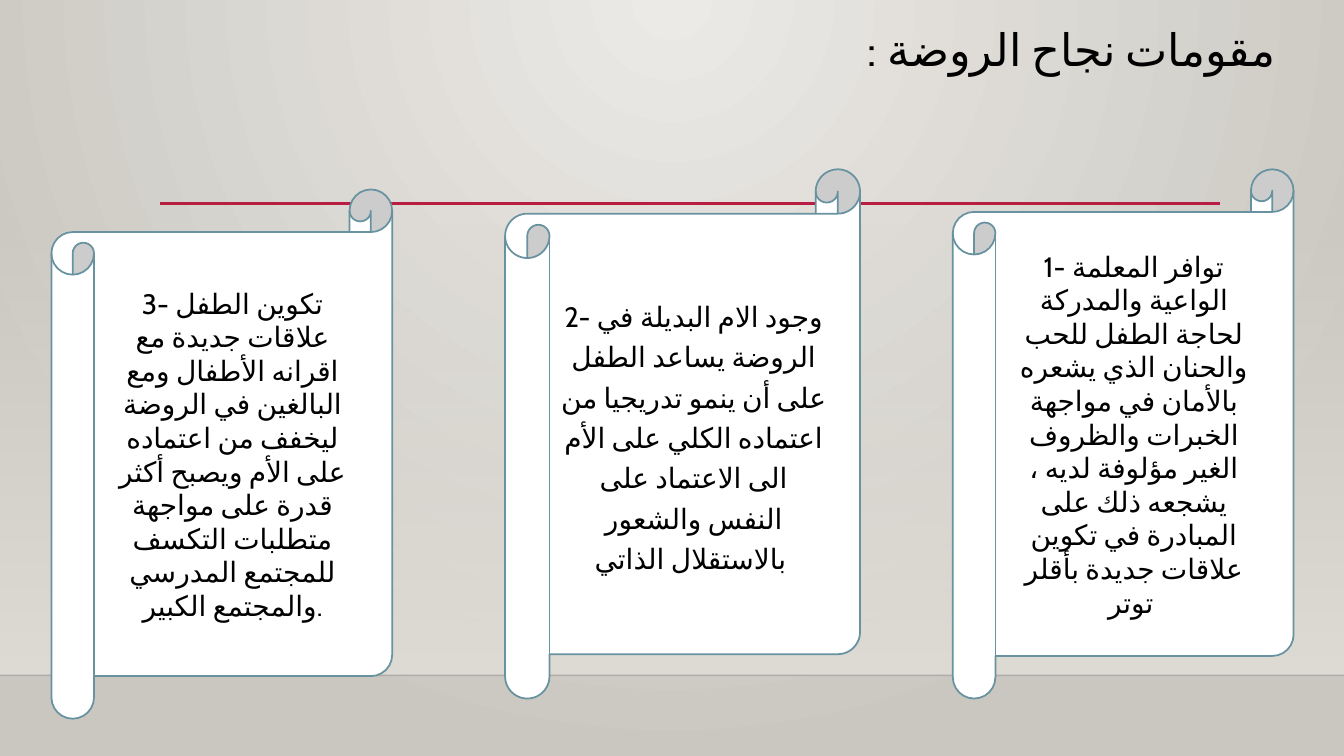
import pptx
import pptx.util
import pptx.dml.color
import pptx.enum.lang
import pptx.enum.shapes
import pptx.enum.text
import pptx.oxml.ns
from lxml import etree

Inches = pptx.util.Inches
Pt = pptx.util.Pt
RGBColor = pptx.dml.color.RGBColor
qn = pptx.oxml.ns.qn
ALIGN = pptx.enum.text.PP_ALIGN
ANCHOR = pptx.enum.text.MSO_ANCHOR
SHAPE = pptx.enum.shapes.MSO_SHAPE

FONT = "Cabin"
BLACK = RGBColor(0x00, 0x00, 0x00)
WHITE = RGBColor(0xFF, 0xFF, 0xFF)
GLOW = RGBColor(0xEC, 0xEA, 0xE7)
EDGE = RGBColor(0xCA, 0xC7, 0xC1)
WALL = RGBColor(0xDF, 0xDB, 0xD5)
FLOOR_LINE = RGBColor(0x00, 0x00, 0x01)
CRIMSON = RGBColor(0xB7, 0x1E, 0x42)
SCROLL_EDGE = RGBColor(0x68, 0x92, 0xA0)

TITLE = "مقومات نجاح الروضة :"
TEACHER = (
    "1- توافر المعلمة الواعية والمدركة لحاجة الطفل للحب والحنان الذي يشعره "
    "بالأمان في مواجهة الخبرات والظروف الغير مؤلوفة لديه ، يشجعه ذلك على "
    "المبادرة في تكوين علاقات جديدة بأقلر توتر "
)
SUBSTITUTE_MOTHER = (
    "2- وجود الام البديلة في الروضة يساعد الطفل على أن ينمو تدريجيا من "
    "اعتماده الكلي على الأم الى الاعتماد على النفس والشعور بالاستقلال الذاتي "
)
RELATIONSHIPS = (
    "3- تكوين الطفل علاقات جديدة مع اقرانه الأطفال ومع البالغين في الروضة "
    "ليخفف من اعتماده على الأم ويصبح أكثر قدرة على مواجهة متطلبات التكسف "
    "للمجتمع المدرسي والمجتمع الكبير."
)


def set_alpha(color, percent):
    etree.SubElement(color, qn("a:alpha"), val=str(percent * 1000))


def set_gradient(fill, start, end):
    fill.gradient()
    for stop, color in zip(fill.gradient_stops, (start, end)):
        stop.color.rgb = color


def paint_background(slide):
    """Fill the background with a glow that spreads from the top centre."""
    set_gradient(slide.background.fill, GLOW, EDGE)
    gradient = slide.element.find(".//" + qn("a:gradFill"))
    gradient.remove(gradient.find(qn("a:lin")))
    glow = etree.SubElement(gradient, qn("a:path"), path="circle")
    etree.SubElement(glow, qn("a:fillToRect"), l="43000", t="0", r="43000", b="100000")


def add_wall(slide):
    """Add the band that fades in towards the floor."""
    wall = slide.shapes.add_shape(
        SHAPE.RECTANGLE, Inches(0), Inches(2.21), Inches(13.33), Inches(4.49))
    wall.shadow.inherit = False
    wall.line.fill.background()
    set_gradient(wall.fill, WALL, WALL)
    wall.fill.gradient_angle = 270
    set_alpha(wall.element.spPr.find(".//" + qn("a:srgbClr")), 0)


def add_rule(slide, left, right, y, color, width, opacity=100):
    rule = slide.shapes.add_connector(
        pptx.enum.shapes.MSO_CONNECTOR.STRAIGHT,
        Inches(left), Inches(y), Inches(right), Inches(y))
    rule.line.color.rgb = color
    rule.line.width = Pt(width)
    properties = rule.element.spPr
    if opacity < 100:
        set_alpha(properties.find(".//" + qn("a:srgbClr")), opacity)
    etree.SubElement(properties, qn("a:effectLst"))


def write(shape, text, size, align, anchor):
    """Put one Arabic paragraph in the shape and return it."""
    frame = shape.text_frame
    frame.word_wrap = True
    frame.vertical_anchor = anchor
    frame.text = text
    paragraph = frame.paragraphs[0]
    paragraph.alignment = align
    run = paragraph.runs[0]
    run.font.size = Pt(size)
    run.font.name = FONT
    run.font.color.rgb = BLACK
    run.font.language_id = pptx.enum.lang.MSO_LANGUAGE_ID.ARABIC_IRAQ
    etree.SubElement(run.font._element, qn("a:cs"), typeface=FONT)
    return paragraph


def add_title(slide):
    title = slide.shapes.add_textbox(
        Inches(1.25), Inches(0.23), Inches(11.5), Inches(1.45))
    paragraph = write(title, TITLE, 32, ALIGN.RIGHT, ANCHOR.TOP)
    paragraph.line_spacing = 0.9
    paragraph._p.get_or_add_pPr().set("rtl", "1")


def add_scroll(slide, left, top, width, text, line_spacing=1.0):
    scroll = slide.shapes.add_shape(
        SHAPE.HORIZONTAL_SCROLL, Inches(left), Inches(top), Inches(width), Inches(5.25))
    scroll.shadow.inherit = False
    scroll.fill.solid()
    scroll.fill.fore_color.rgb = WHITE
    scroll.line.color.rgb = SCROLL_EDGE
    scroll.line.width = Pt(1.25)
    paragraph = write(scroll, text, 20, ALIGN.CENTER, ANCHOR.MIDDLE)
    paragraph.line_spacing = line_spacing


def main():
    deck = pptx.Presentation()
    deck.slide_width = Inches(13.33)
    deck.slide_height = Inches(7.5)
    slide = deck.slides.add_slide(deck.slide_layouts[6])

    paint_background(slide)
    add_wall(slide)
    add_rule(slide, 0, 13.33, 6.7, FLOOR_LINE, 1, opacity=20)
    add_rule(slide, 1.59, 12.1, 2.02, CRIMSON, 2.5)
    add_title(slide)
    add_scroll(slide, 5.01, 1.68, 3.52, SUBSTITUTE_MOTHER, line_spacing=1.2)
    add_scroll(slide, 9.45, 1.68, 3.38, TEACHER)
    add_scroll(slide, 0.51, 1.88, 3.38, RELATIONSHIPS)

    deck.save("out.pptx")


if __name__ == "__main__":
    main()
